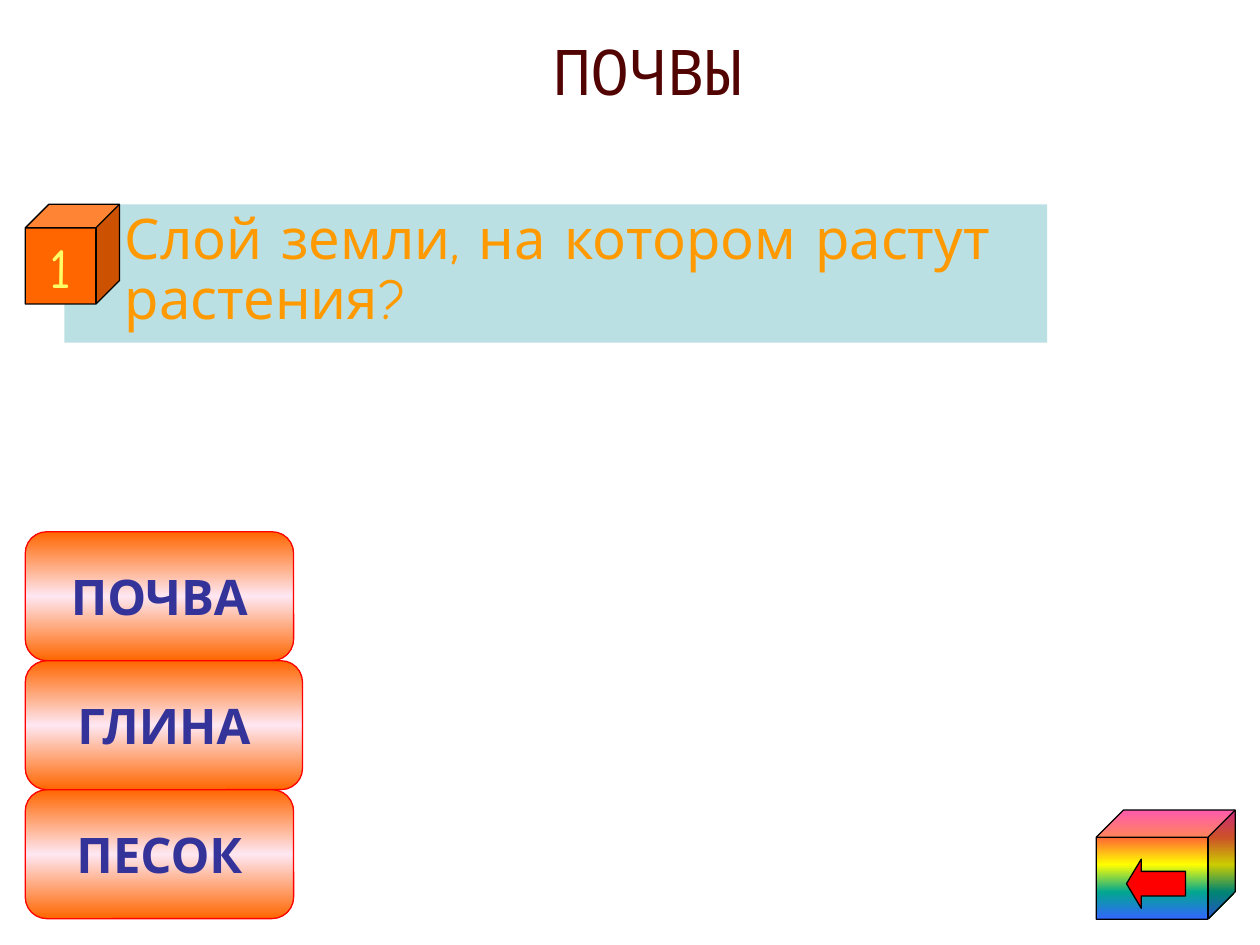
from dataclasses import dataclass

from lxml import etree
from pptx import Presentation
from pptx import util as u
from pptx.dml.color import RGBColor
from pptx.enum import shapes, text
from pptx.oxml import ns


@dataclass(frozen=True)
class Theme:
    hand: str = "Comic Neue"
    mono: str = "Noto Sans Mono"
    title: str = "520402"
    panel: str = "BBE0E3"
    question: str = "FF9900"
    number: str = "FFFF66"
    answer: str = "333399"
    orange: str = "FF6600"
    red: str = "FF0000"
    black: str = "000000"
    glow: tuple = ("FF6600", "FEE7F2", "FF6600")
    rainbow: tuple = ("FF3399", "FF6633", "FFFF00", "01A78F", "3366FF")
    title_size: int = 36
    question_size: int = 32
    answer_size: int = 28


theme = Theme()


def write(box, words, font=theme.hand, size=theme.answer_size, color=theme.black,
          bold=False, align=text.PP_ALIGN.CENTER, anchor=text.MSO_ANCHOR.MIDDLE,
          wrap=False):
    frame = box.text_frame
    frame.auto_size = text.MSO_AUTO_SIZE.NONE
    frame.word_wrap = wrap
    frame.vertical_anchor = anchor
    para = frame.paragraphs[0]
    para.alignment = align
    para.space_before = u.Pt(0)
    span = para.add_run()
    span.text = words
    span.font.name = font
    span.font.size = u.Pt(size)
    span.font.bold = bold
    span.font.color.rgb = RGBColor.from_string(color)
    return para


def paint(shape, colors, line):
    """Fill with one colour, or with evenly spaced colours from top to bottom."""
    shape.shadow.inherit = False
    shape.line.color.rgb = RGBColor.from_string(line)
    shape.line.width = u.Pt(0.75)
    if isinstance(colors, str):
        shape.fill.solid()
        shape.fill.fore_color.rgb = RGBColor.from_string(colors)
        return
    shape.fill.gradient()
    shape.fill.gradient_angle = 270
    stops = shape._element.spPr.find(ns.qn("a:gradFill")).find(ns.qn("a:gsLst"))
    for stop in list(stops):
        stops.remove(stop)
    for index, color in enumerate(colors):
        position = 100000 * index // (len(colors) - 1)
        stop = etree.SubElement(stops, ns.qn("a:gs"), pos=str(position))
        etree.SubElement(stop, ns.qn("a:srgbClr"), val=color)


deck = Presentation()
deck.slide_width, deck.slide_height = u.Cm(25.4), u.Cm(19.05)
page = deck.slides.add_slide(deck.slide_layouts[1])

# Title
title = page.shapes.title
title.left, title.top, title.width, title.height = map(u.Cm, (2.49, 0.53, 21.13, 3.61))
write(title, "ПОЧВЫ", font=theme.mono, size=theme.title_size, color=theme.title,
      anchor=text.MSO_ANCHOR.TOP)

# Question
question = page.placeholders[1]
question.left, question.top, question.width, question.height = map(
    u.Cm, (1.3, 4.12, 19.81, 2.79))
question.fill.solid()
question.fill.fore_color.rgb = RGBColor.from_string(theme.panel)
para = write(question, "\tСлой земли, на котором растут растения?",
             size=theme.question_size, color=theme.question,
             align=text.PP_ALIGN.LEFT, anchor=text.MSO_ANCHOR.TOP, wrap=True)
para.line_spacing = 0.9
properties = para._p.get_or_add_pPr()
properties.set("marL", str(u.Cm(0.96)))
properties.set("indent", str(u.Cm(-0.96)))
etree.SubElement(properties, ns.qn("a:buNone"))

# Answers, stacked without gaps
answer_height = 2.6
for row, (words, width) in enumerate([("ПОЧВА", 5.41), ("ГЛИНА", 5.59), ("ПЕСОК", 5.41)]):
    answer = page.shapes.add_shape(
        shapes.MSO_SHAPE.ROUNDED_RECTANGLE, u.Cm(0.51),
        u.Cm(10.72 + row * answer_height), u.Cm(width), u.Cm(answer_height))
    paint(answer, theme.glow, theme.red)
    write(answer, words, color=theme.answer, bold=True)

# Back button
button = page.shapes.add_group_shape()
cube = button.shapes.add_shape(
    shapes.MSO_SHAPE.CUBE, u.Cm(22.1), u.Cm(16.33), u.Cm(2.8), u.Cm(2.2))
paint(cube, theme.rainbow, theme.black)
arrow = button.shapes.add_shape(
    shapes.MSO_SHAPE.LEFT_ARROW, u.Cm(22.71), u.Cm(17.32), u.Cm(1.19), u.Cm(0.99))
arrow.adjustments[1] = 0.3
paint(arrow, theme.red, theme.black)

# Question number
number = page.shapes.add_shape(
    shapes.MSO_SHAPE.CUBE, u.Cm(0.51), u.Cm(4.12), u.Cm(1.9), u.Cm(2.01))
paint(number, theme.orange, theme.black)
write(number, "1", size=theme.question_size, color=theme.number)

deck.save("out.pptx")
